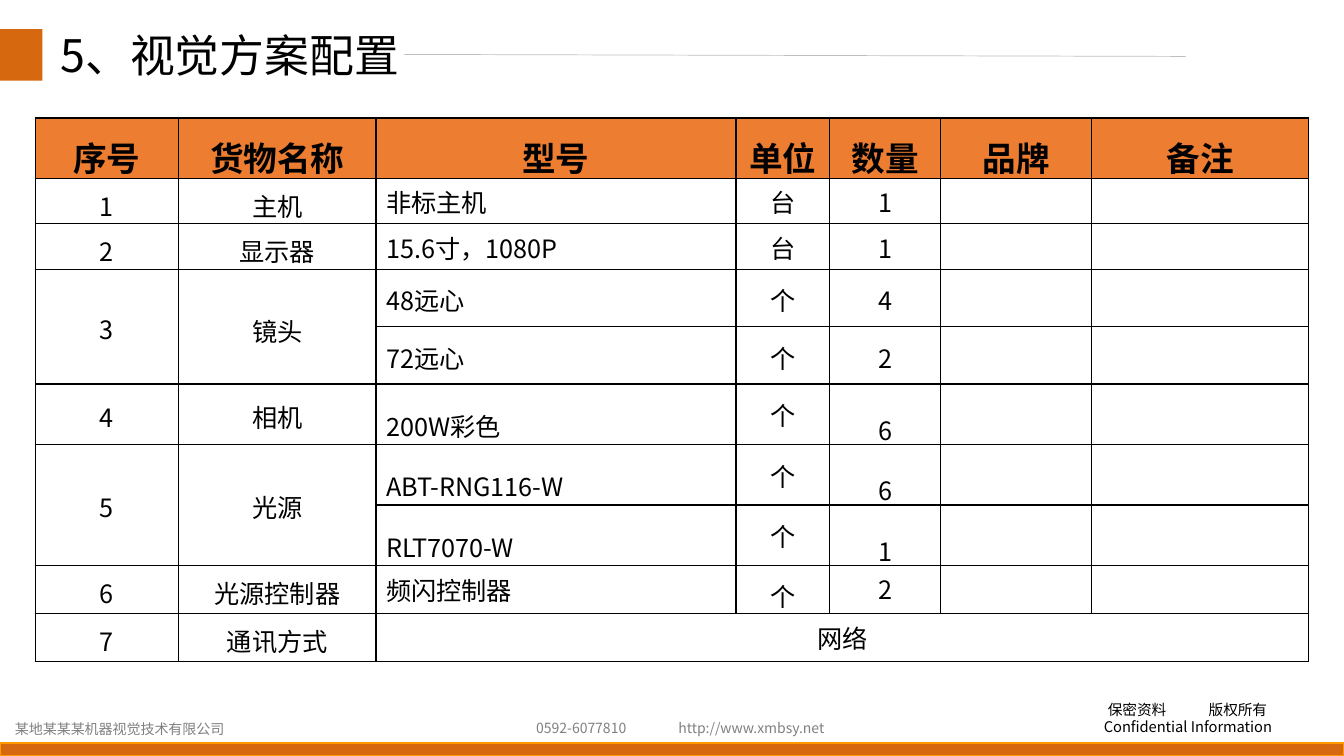
from lxml.etree import SubElement
from pptx import Presentation
from pptx.dml.color import RGBColor
from pptx.enum.shapes import MSO_CONNECTOR, MSO_SHAPE
from pptx.enum.text import MSO_ANCHOR, PP_ALIGN
from pptx.oxml.ns import qn
from pptx.util import Inches, Pt

LEFT, CENTER = PP_ALIGN.LEFT, PP_ALIGN.CENTER
TOP, MIDDLE = MSO_ANCHOR.TOP, MSO_ANCHOR.MIDDLE
RECTANGLE, STRAIGHT = MSO_SHAPE.RECTANGLE, MSO_CONNECTOR.STRAIGHT

FONT = "Noto Sans CJK SC"
COLORS = {"orange": "D6680F", "edge": "FF9900", "header": "ED7D31", "white": "FFFFFF",
          "black": "000000", "gray": "808080", "rule": "BFBFBF"}
WIDTH, HEIGHT = 13.33, 7.5

TITLE = "5、视觉方案配置"
# left, top, width, text
CONTACTS = [
    (0.05, 7.1, 2.35, "某地某某某机器视觉技术有限公司"),
    (5.22, 7.09, 1.3, "0592-6077810"),
    (6.63, 7.09, 1.67, "http://www.xmbsy.net"),
]
NOTICE = ["保密资料\t版权所有", "Confidential Information"]

TABLE_LEFT, TABLE_TOP = 0.35, 1.17
COLUMNS = [1.42, 1.96, 3.57, 0.93, 1.1, 1.5, 2.15]
HEADER = ["序号", "货物名称", "型号", "单位", "数量", "品牌", "备注"]
MODEL_COLUMN = 2
# row height, cell texts, line spacing of each text
ROWS = [
    (0.6, HEADER, [1.2] * 7),
    (0.45, ["1", "主机", "非标主机", "台", "1"], [1.1, 1.1, 1, 1, 1]),
    (0.45, ["2", "显示器", "15.6寸，1080P", "台", "1"], [1.1, 1.1, 1, 1, 1]),
    (0.57, ["3", "镜头", "48远心", "个", "4"], [1.1, 1.2, 1.2, 1.2, 1.2]),
    (0.57, ["", "", "72远心", "个", "2"], [1, 1, 1.2, 1.2, 1.2]),
    (0.6, ["4", "相机", "200W彩色", "个", "6"], [1.1, 1.1, 1.5, 1.2, 1.6]),
    (0.6, ["5", "光源", "ABT-RNG116-W", "个", "6"], [1.1, 1.1, 1.5, 1.2, 1.6]),
    (0.6, ["", "", "RLT7070-W", "个", "1"], [1, 1, 1.5, 1.2, 1.6]),
    (0.48, ["6", "光源控制器", "频闪控制器", "个", "2"], [1.1, 1.1, 1, 1.2, 1]),
    (0.47, ["7", "通讯方式", "网络"], [1.1, 1.1, 1]),
]
# first and last cell as (row, column)
MERGES = [((3, 0), (4, 0)), ((3, 1), (4, 1)), ((6, 0), (7, 0)), ((6, 1), (7, 1)),
          ((9, 2), (9, 6))]
MIDDLE_CELLS = {(3, 0), (3, 1), (5, 0), (5, 1), (6, 0), (6, 1), (8, 1), (8, 2), (9, 2)}


def rgb(name):
    return RGBColor.from_string(COLORS[name])


def style(para, size, color="black", bold=False):
    font = para.font
    font.name, font.size, font.bold = FONT, Pt(size), bold
    font.color.rgb = rgb(color)
    SubElement(para._p.pPr.find(qn("a:defRPr")), qn("a:ea"), typeface=FONT)


def add_text(page, left, top, width, height, lines, size, color="black", spacing=None):
    box = page.shapes.add_textbox(*map(Inches, (left, top, width, height)))
    frame = box.text_frame
    frame.word_wrap = True
    for index, line in enumerate(lines):
        para = frame.add_paragraph() if index else frame.paragraphs[0]
        para.text = line
        if spacing:
            para.line_spacing = spacing
        if "\t" in line:
            properties = para._p.get_or_add_pPr()
            properties.set("marL", str(Inches(0.04)))
            properties.set("indent", "0")
            stops = SubElement(properties, qn("a:tabLst"))
            SubElement(stops, qn("a:tab"), pos=str(Inches(0.81)), algn="l")
        style(para, size, color)


def add_bar(page, left, top, width, height, edge=None):
    bar = page.shapes.add_shape(RECTANGLE, *map(Inches, (left, top, width, height)))
    bar.shadow.inherit = False
    bar.fill.solid()
    bar.fill.fore_color.rgb = rgb("orange")
    if edge:
        bar.line.color.rgb = rgb(edge)
        bar.line.width = Pt(1)
    else:
        bar.line.fill.background()


def add_rule(page):
    rule = page.shapes.add_connector(STRAIGHT, *map(Inches, (4.01, 0.54, 11.76, 0.56)))
    rule.line.color.rgb = rgb("rule")
    rule.line.width = Pt(0.5)
    SubElement(rule._element.spPr, qn("a:effectLst"))


def set_borders(cell):
    properties = cell._tc.get_or_add_tcPr()
    for side in ("a:lnL", "a:lnR", "a:lnT", "a:lnB"):
        line = SubElement(properties, qn(side), w=str(Pt(1)))
        fill = SubElement(line, qn("a:solidFill"))
        SubElement(fill, qn("a:srgbClr"), val=COLORS["black"])


def add_parts_table(page):
    total = sum(height for height, _, _ in ROWS)
    frame = page.shapes.add_table(len(ROWS), len(COLUMNS), *map(
        Inches, (TABLE_LEFT, TABLE_TOP, sum(COLUMNS), total)))
    table = frame.table
    for column, width in zip(table.columns, COLUMNS):
        column.width = Inches(width)
    for r, (height, texts, spacings) in enumerate(ROWS):
        table.rows[r].height = Inches(height)
        for c in range(len(COLUMNS)):
            cell = table.cell(r, c)
            set_borders(cell)
            cell.fill.solid()
            cell.fill.fore_color.rgb = rgb("white" if r else "header")
            cell.vertical_anchor = MIDDLE if (r, c) in MIDDLE_CELLS else TOP
            para = cell.text_frame.paragraphs[0]
            if c < len(texts):
                para.text = texts[c]
                para.line_spacing = spacings[c]
            is_model = 0 < r < len(ROWS) - 1 and c == MODEL_COLUMN
            para.alignment = LEFT if is_model else CENTER
            style(para, 18 if r else 24, bold=r == 0)
    for first, last in MERGES:
        table.cell(*first).merge(table.cell(*last))


def main():
    deck = Presentation()
    deck.slide_width, deck.slide_height = Inches(WIDTH), Inches(HEIGHT)
    page = deck.slides.add_slide(deck.slide_layouts[6])
    add_bar(page, 0, 0.29, 0.42, 0.51)
    add_bar(page, 0, HEIGHT - 0.13, WIDTH, 0.13, "edge")
    add_text(page, 10.85, 6.9, 2.17, 0.45, NOTICE, 10.5)
    for left, top, width, text in CONTACTS:
        add_text(page, left, top, width, 0.27, [text], 10, "gray")
    add_rule(page)
    add_text(page, 0.5, 0.29, 3.83, 0.71, [TITLE], 32, spacing=0.9)
    add_parts_table(page)
    deck.save("out.pptx")


if __name__ == "__main__":
    main()
